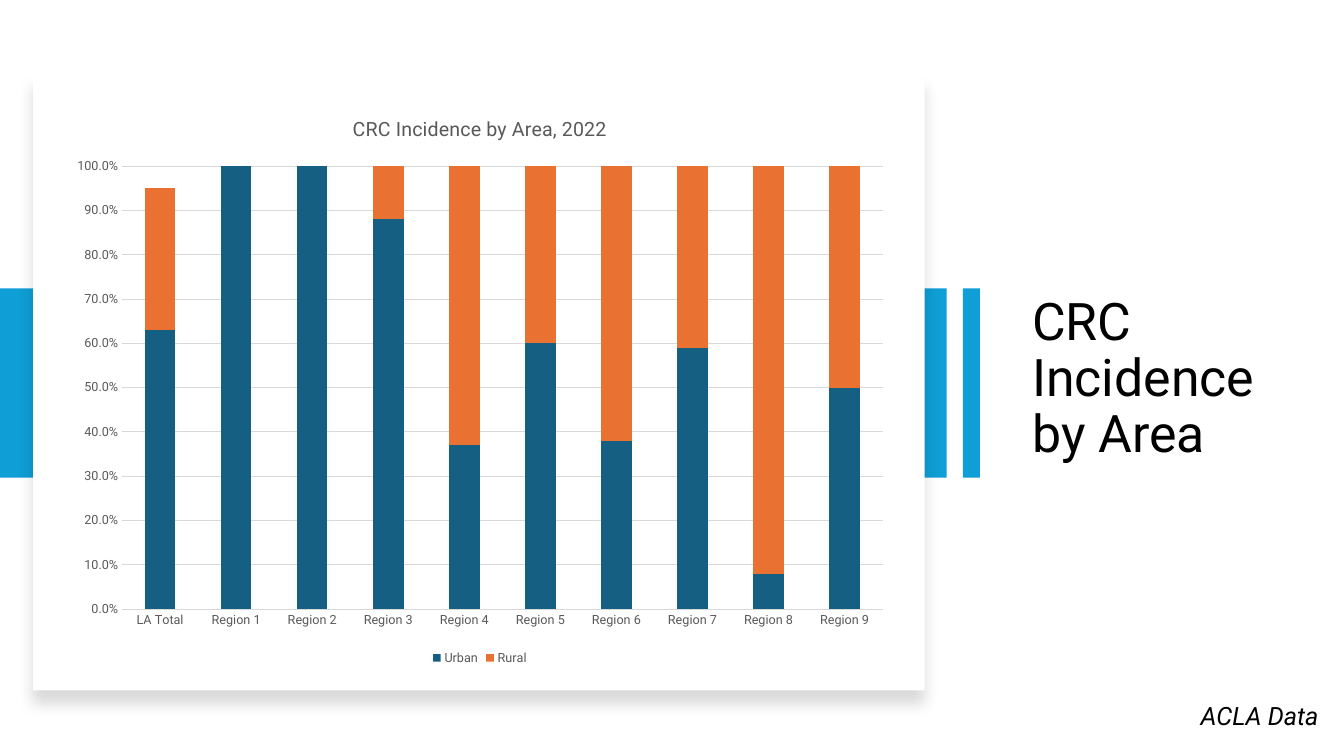
from lxml import etree
from pptx import Presentation
from pptx.chart.data import CategoryChartData
from pptx.dml.color import RGBColor
from pptx.enum.chart import XL_CHART_TYPE, XL_LEGEND_POSITION, XL_TICK_MARK
from pptx.enum.shapes import MSO_SHAPE
from pptx.enum.text import MSO_ANCHOR
from pptx.oxml.ns import qn
from pptx.util import Pt

PX = 9144  # EMU per px, 100 px to the inch
RECT = MSO_SHAPE.RECTANGLE
STACKED = XL_CHART_TYPE.COLUMN_STACKED
BOTTOM = XL_LEGEND_POSITION.BOTTOM
NO_TICK = XL_TICK_MARK.NONE
MIDDLE, TOP = MSO_ANCHOR.MIDDLE, MSO_ANCHOR.TOP

THEME = {
    "band": RGBColor.from_string("0F9ED5"),
    "card": RGBColor.from_string("FFFFFF"),
    "grid": RGBColor.from_string("D9D9D9"),
    "bars": [RGBColor.from_string(c) for c in ("156082", "E97132")],
    "black": RGBColor.from_string("000000"),
    "gray": RGBColor.from_string("595959"),
    "face": "Roboto",
    "title": Pt(37),
    "credit": Pt(18),
    "head": Pt(14),
    "label": Pt(9),
}


def style(font, size, color, **extra):
    form = {"name": THEME["face"], "size": THEME[size], "bold": False, **extra}
    for key, value in form.items():
        setattr(font, key, value)
    font.color.rgb = THEME[color]


def note(place, words, size, anchor, **extra):
    frame = slide.shapes.add_textbox(*[n * PX for n in place]).text_frame
    for key, value in {"word_wrap": True, "vertical_anchor": anchor}.items():
        setattr(frame, key, value)
    para = frame.paragraphs[0]
    run = para.add_run()
    run.text = words
    style(run.font, size, "black", **extra)
    return para


deck = Presentation()
deck.slide_width, deck.slide_height = 1333 * PX, 750 * PX
slide = deck.slides.add_slide(deck.slide_layouts[6])

# Title
title = note((1014, 221, 270, 311), "CRC Incidence by Area", "title", MIDDLE)
title.line_spacing = 0.9

# Blue bands and the white card between them
for place, color in (
    ((0, 286, 939, 188), "band"),
    ((33, 73, 884, 612), "card"),
    ((955, 286, 17, 188), "band"),
):
    panel = slide.shapes.add_shape(RECT, *[n * PX for n in place])
    panel.shadow.inherit = False
    panel.fill.solid()
    panel.fill.fore_color.rgb = THEME[color]
    panel.line.fill.background()
    if color == "card":
        # Soft shadow below the card
        glow = etree.SubElement(
            panel.element.spPr.find(qn("a:effectLst")), qn("a:outerShdw"),
            blurRad=str(Pt(11)), dist=str(Pt(10)), dir="5400000",
            algn="t", rotWithShape="0")
        tint = etree.SubElement(glow, qn("a:srgbClr"), val=str(THEME["black"]))
        etree.SubElement(tint, qn("a:alpha"), val="15000")

# Chart values
data = CategoryChartData(number_format="0.0%")
data.categories = ["LA Total"] + [f"Region {n}" for n in range(1, 10)]
data.add_series("Urban", (0.63, 1, 1, 0.88, 0.37, 0.6, 0.38, 0.59, 0.08, 0.5))
data.add_series("Rural", (0.32, 0, 0, 0.12, 0.63, 0.4, 0.62, 0.41, 0.92, 0.5))
place = (60, 94, 832, 570)
chart = slide.shapes.add_chart(STACKED, *[n * PX for n in place], data).chart
style(chart.font, "label", "gray")

# Chart title and legend
chart.has_title = True
head = chart.chart_title.text_frame
head.text = "CRC Incidence by Area, 2022"
style(head.paragraphs[0].runs[0].font, "head", "gray")
chart.has_legend = True
for key, value in {"position": BOTTOM, "include_in_layout": False}.items():
    setattr(chart.legend, key, value)
style(chart.legend.font, "label", "gray")

# Columns
plot = chart.plots[0]
for key, value in {"gap_width": 150, "overlap": 100, "vary_by_categories": False}.items():
    setattr(plot, key, value)
for series, color in zip(plot.series, THEME["bars"]):
    series.format.fill.solid()
    series.format.fill.fore_color.rgb = color

# Axes
cats, vals = chart.category_axis, chart.value_axis
for axis in (cats, vals):
    axis.major_tick_mark = axis.minor_tick_mark = NO_TICK
    style(axis.tick_labels.font, "label", "gray")
for key, value in {"minimum_scale": 0, "maximum_scale": 1, "major_unit": 0.1}.items():
    setattr(vals, key, value)
for key, value in {"number_format": "0.0%", "number_format_is_linked": False}.items():
    setattr(vals.tick_labels, key, value)
vals.format.line.fill.background()
for line in (cats.format.line, vals.major_gridlines.format.line):
    line.width = Pt(0.75)
    line.color.rgb = THEME["grid"]

# Data credit
note((1181, 690, 163, 40), "ACLA Data", "credit", TOP, italic=True)

deck.save("out.pptx")
